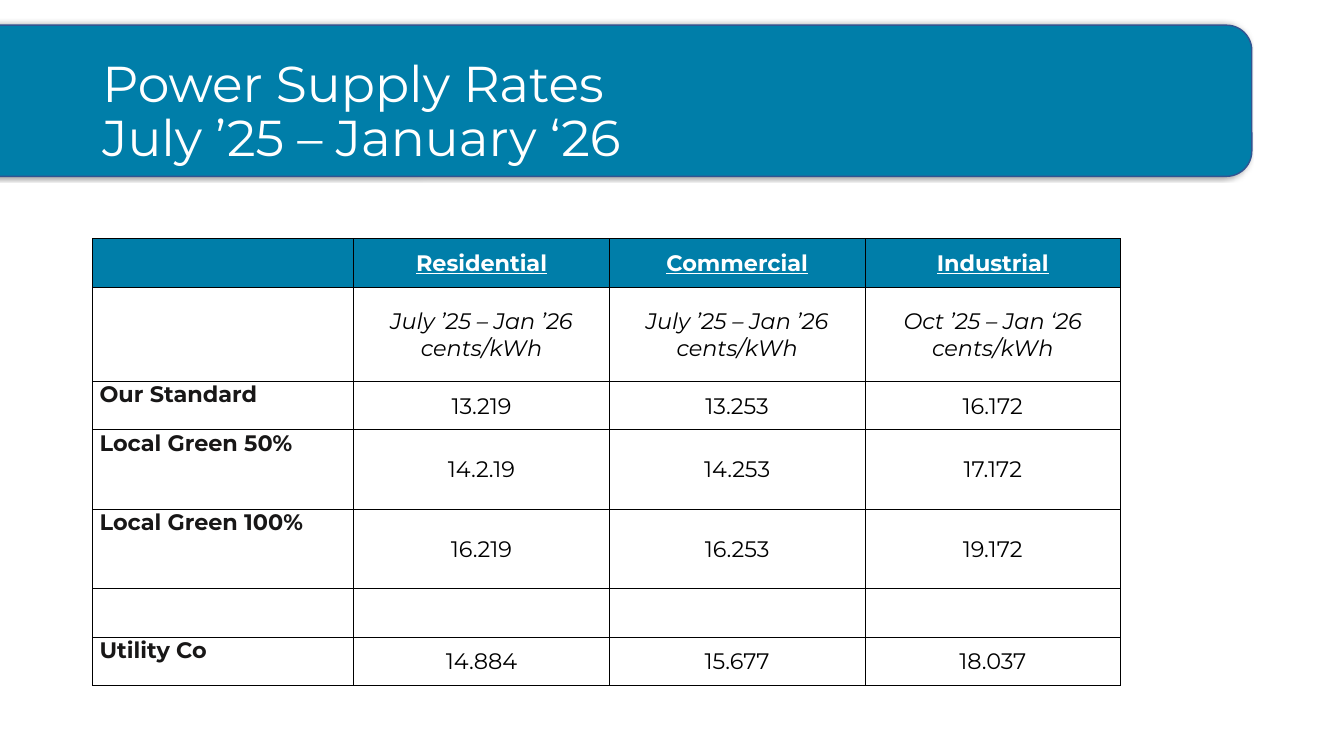
from lxml.etree import SubElement
from pptx import Presentation
from pptx.dml.color import RGBColor as Rgb
from pptx.enum.shapes import MSO_SHAPE as Preset
from pptx.enum.text import MSO_ANCHOR as Anchor, PP_ALIGN as Align
from pptx.oxml import parse_xml
from pptx.oxml.ns import nsdecls, qn
from pptx.util import Pt

COLORS = {
    "teal": "007EA9",
    "outline": "325491",
    "white": "FFFFFF",
    "black": "000000",
    "label": "181717",
}

FORMATS = {
    "title": {"size": Pt(36), "color": "white"},
    "header": {"size": Pt(16), "color": "white", "bold": True, "underline": True},
    "period": {"size": Pt(16), "color": "black", "italic": True},
    "label": {"size": Pt(16), "color": "label", "bold": True},
    "rate": {"size": Pt(16), "color": "black"},
}

CENTERED = {
    "vertical_anchor": Anchor.MIDDLE,
    "margin_left": Pt(0.7),
    "margin_top": Pt(0.7),
    "margin_right": Pt(0.7),
    "margin_bottom": Pt(0),
}
LABEL = {
    "vertical_anchor": Anchor.TOP,
    "margin_left": Pt(5),
    "margin_top": Pt(0),
    "margin_right": Pt(5),
    "margin_bottom": Pt(0),
}

COLUMN_WIDTHS = [186.5, 182.6, 182.6, 182.6]
ROW_HEIGHTS = [34.6, 67.4, 34.6, 56.7, 56.7, 34.6, 34.6]
RATES = [
    ["", "Residential", "Commercial", "Industrial"],
    ["", "July ’25 – Jan ’26 cents/kWh", "July ’25 – Jan ’26 cents/kWh", "Oct ’25 – Jan ‘26 cents/kWh"],
    ["Our Standard", "13.219", "13.253", "16.172"],
    ["Local Green 50%", "14.2.19", "14.253", "17.172"],
    ["Local Green 100%", "16.219", "16.253", "19.172"],
    ["", "", "", ""],
    ["Utility Co", "14.884", "15.677", "18.037"],
]


def set_all(target, values):
    for name, value in values.items():
        setattr(target, name, value)


class SlideBuilder:
    font_name = "Montserrat"

    def __init__(self, slide):
        self.slide = slide

    def color(self, name):
        return Rgb.from_string(COLORS[name])

    def fill_text(self, frame, text, style, align=Align.LEFT, spacing=1.0):
        frame.word_wrap = True
        paragraph = frame.paragraphs[0]
        paragraph.text = text
        paragraph.alignment = align
        paragraph.line_spacing = spacing
        for run in paragraph.runs:
            values = dict(FORMATS[style])
            run.font.color.rgb = self.color(values.pop("color"))
            set_all(run.font, {"name": self.font_name, **values})

    def banner(self, left, top, width, height):
        shape = self.slide.shapes.add_shape(
            Preset.ROUNDED_RECTANGLE, Pt(left), Pt(top), Pt(width), Pt(height))
        shape.fill.solid()
        shape.fill.fore_color.rgb = self.color("teal")
        shape.line.color.rgb = self.color("outline")
        shape.line.width = Pt(1)
        shape.shadow.inherit = False
        effects = shape._element.spPr.find(qn("a:effectLst"))
        shadow = SubElement(effects, qn("a:outerShdw"), blurRad=str(Pt(4)),
                            dist=str(Pt(3)), dir="10800000", rotWithShape="0")
        tint = SubElement(shadow, qn("a:srgbClr"), val=COLORS["black"])
        SubElement(tint, qn("a:alpha"), val="40000")

    def title(self, text, left, top, width, height):
        box = self.slide.shapes.add_textbox(Pt(left), Pt(top), Pt(width), Pt(height))
        box.text_frame.vertical_anchor = Anchor.MIDDLE
        self.fill_text(box.text_frame, text, "title", spacing=0.9)

    def borders(self, cell):
        properties = cell._tc.get_or_add_tcPr()
        for index, side in enumerate(("lnL", "lnR", "lnT", "lnB")):
            properties.insert(index, parse_xml(
                f'<a:{side} {nsdecls("a")} w="{Pt(0.5)}"><a:solidFill>'
                f'<a:srgbClr val="{COLORS["black"]}"/></a:solidFill></a:{side}>'))

    def cell(self, cell, text, row, column):
        if row == 0:
            cell.fill.solid()
            cell.fill.fore_color.rgb = self.color("teal")
        else:
            cell.fill.background()
        self.borders(cell)
        if not text:
            return
        if column == 0:
            set_all(cell, LABEL)
            self.fill_text(cell.text_frame, text, "label")
        else:
            set_all(cell, CENTERED)
            style = {0: "header", 1: "period"}.get(row, "rate")
            self.fill_text(cell.text_frame, text, style, Align.CENTER)

    def table(self, rows, left, top, widths, heights):
        table = self.slide.shapes.add_table(
            len(rows), len(widths), Pt(left), Pt(top),
            Pt(sum(widths)), Pt(sum(heights))).table
        set_all(table, {"first_row": False, "horz_banding": False})
        for column, width in zip(table.columns, widths):
            column.width = Pt(width)
        for row, height in zip(table.rows, heights):
            row.height = Pt(height)
        for row, texts in enumerate(rows):
            for column, text in enumerate(texts):
                self.cell(table.cell(row, column), text, row, column)


def main():
    presentation = Presentation()
    presentation.slide_width = Pt(960)
    presentation.slide_height = Pt(540)
    builder = SlideBuilder(presentation.slides.add_slide(presentation.slide_layouts[6]))
    builder.banner(-25.2, 18, 919.4, 108)
    builder.title("Power Supply Rates\vJuly ’25 – January ‘26", 66, 28.8, 828, 104.4)
    builder.table(RATES, 66.2, 170.4, COLUMN_WIDTHS, ROW_HEIGHTS)
    presentation.save("out.pptx")


if __name__ == "__main__":
    main()
